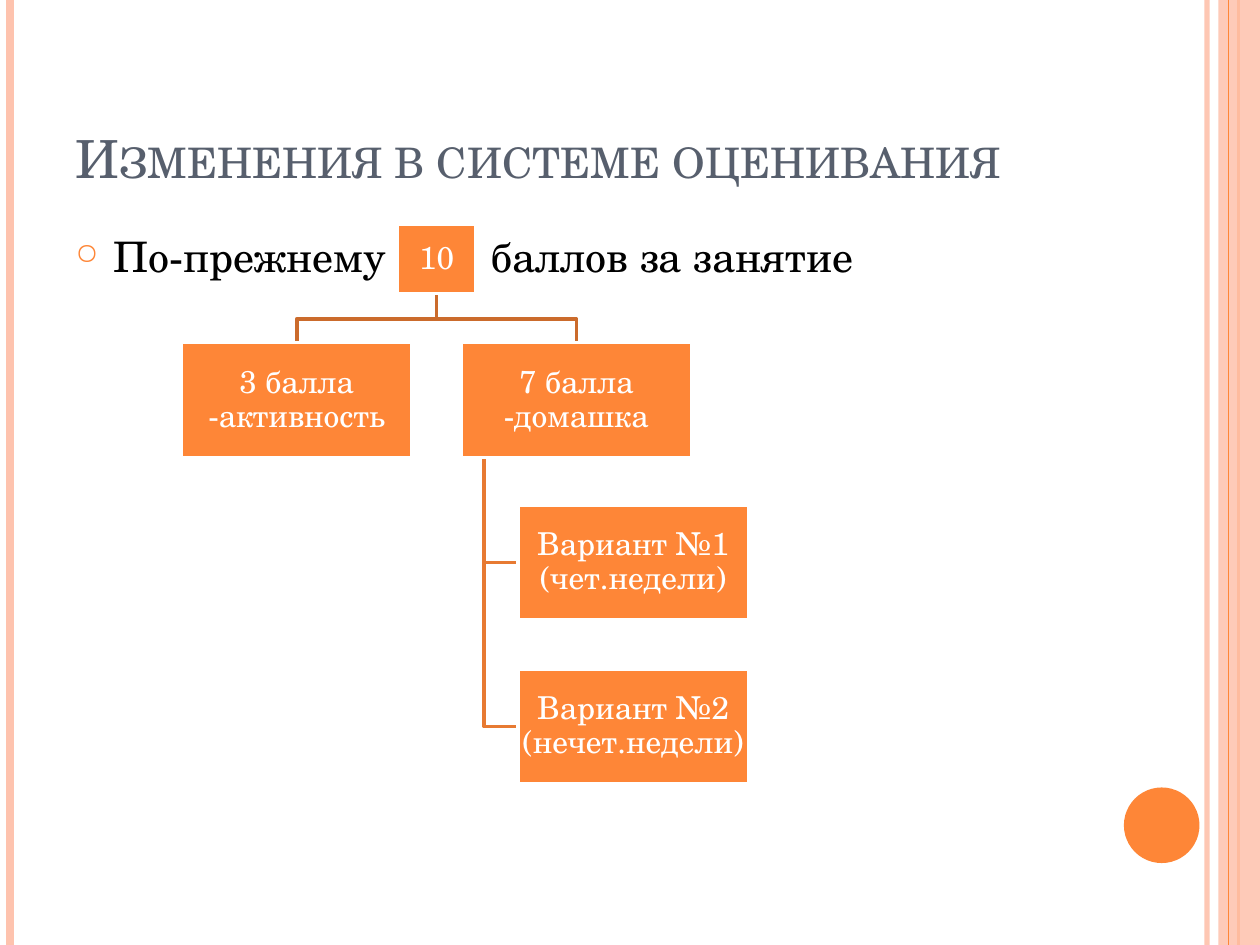
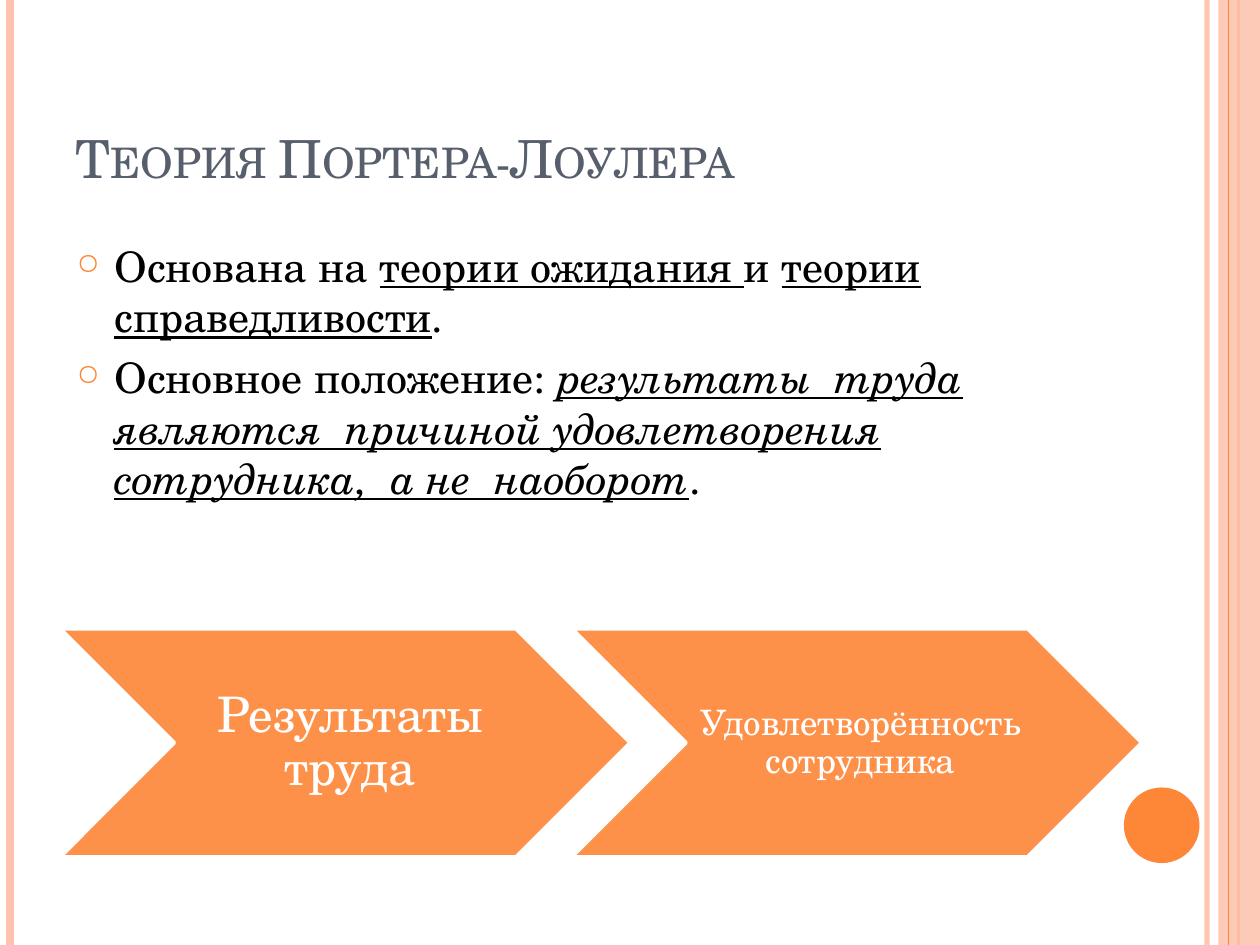
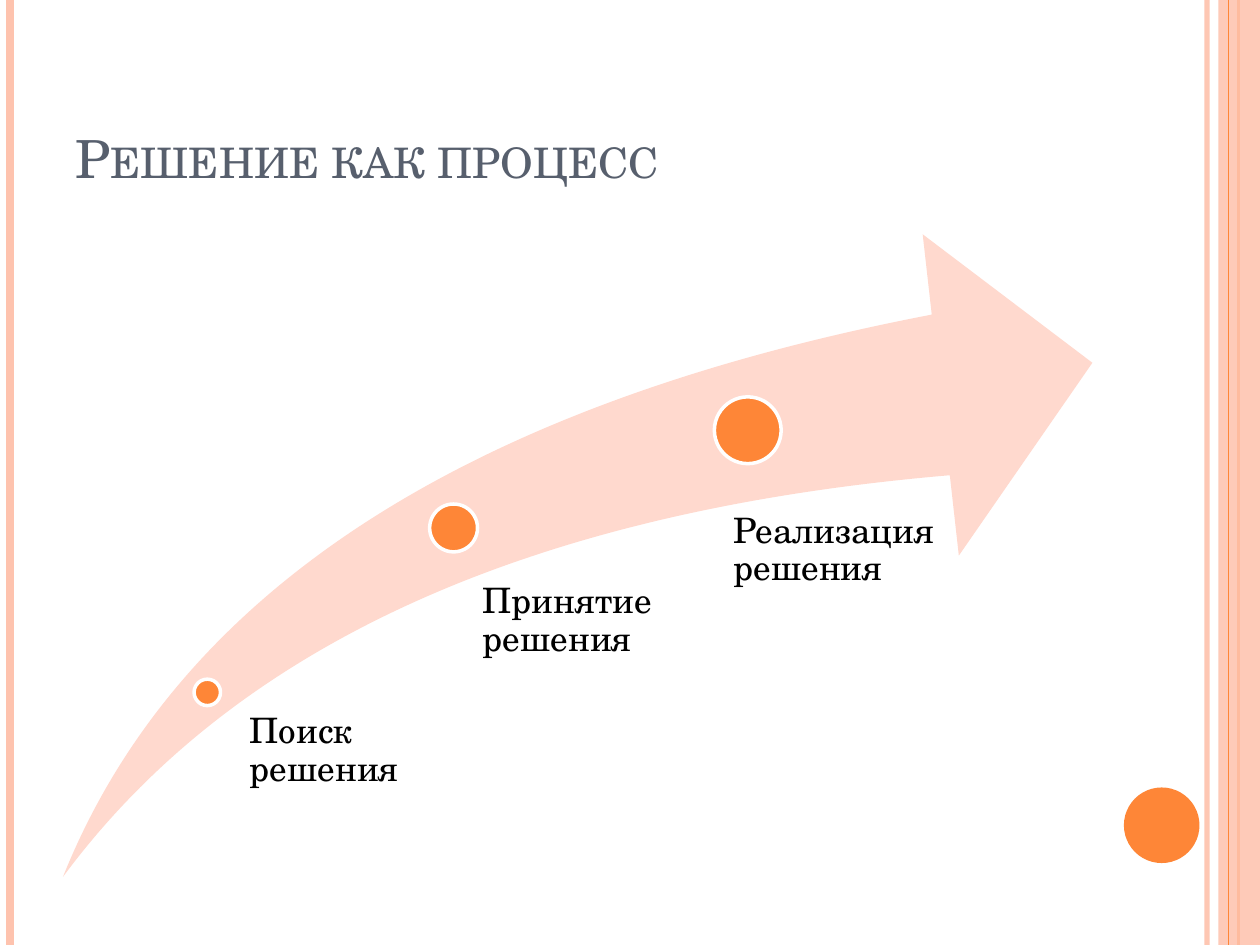
from lxml.etree import SubElement
from pptx import Presentation
from pptx.dml.color import RGBColor
from pptx.enum.shapes import MSO_CONNECTOR as Link, MSO_SHAPE as Kind
from pptx.enum.text import MSO_ANCHOR as Anchor, MSO_AUTO_SIZE as Fit, PP_ALIGN as Align
from pptx.oxml.ns import qn
from pptx.util import Inches, Pt

FONT = "TeX Gyre Schola"
ORANGE, PEACH, BLUSH = "FE8637", "FEC3AE", "FFD9CE"
SLATE, BLACK, WHITE = "575F6D", "000000", "FFFFFF"
FORK, BRANCH = "CB6B2C", "E77A32"
MARK = {"u": "sng"}
STRESS = {"u": "sng", "i": "1"}
GAP = {"spc": "5330"}


def rgb(code):
    """Turn a hex string into a colour."""
    return RGBColor.from_string(code)


def inches(*sizes):
    """Turn numbers into lengths."""
    return [Inches(size) for size in sizes]


def fade(item, alpha):
    """Make the colours set so far on an item partly transparent."""
    for clr in item.element.spPr.iter(qn("a:srgbClr")):
        SubElement(clr, qn("a:alpha"), val=str(alpha * 1000))


def draw(slide, kind, at, fill, edge=None, alpha=100):
    """Add a flat preset shape with an optional 2 pt edge."""
    shape = slide.shapes.add_shape(kind, *inches(*at))
    shape.shadow.inherit = False
    shape.fill.solid()
    shape.fill.fore_color.rgb = rgb(fill)
    if alpha < 100:
        fade(shape, alpha)
    if edge:
        shape.line.color.rgb = rgb(edge)
        shape.line.width = Pt(2)
    else:
        shape.line.fill.background()
    return shape


def rule(slide, x, color, width, alpha=100):
    """Add a vertical line over the full slide height."""
    line = slide.shapes.add_connector(Link.STRAIGHT, *inches(x, 0, x, 7.5))
    line.line.color.rgb = rgb(color)
    line.line.width = Pt(width)
    if alpha < 100:
        fade(line, alpha)
    SubElement(line.element.spPr, qn("a:effectLst"))


def style(para, size, color, align=Align.LEFT):
    """Set the font and alignment of a paragraph."""
    para.alignment = align
    para.font.name = FONT
    para.font.size = Pt(size)
    para.font.color.rgb = rgb(color)


def inset(frame, left, rest):
    """Set the inner margins of a text frame."""
    frame.margin_left = Inches(left)
    frame.margin_top = frame.margin_right = frame.margin_bottom = Inches(rest)


def label(shape, text, size, color=WHITE, align=Align.CENTER,
          anchor=Anchor.MIDDLE, left=0.01, rest=0.01):
    """Write one tightly set paragraph into a shape."""
    frame = shape.text_frame
    frame.word_wrap = True
    frame.vertical_anchor = anchor
    inset(frame, left, rest)
    para = frame.paragraphs[0]
    para.text = text
    para.line_spacing = 0.9
    style(para, size, color, align)


def bullets(slide, at, items):
    """Add a bulleted list whose items are lists of text and run marks."""
    frame = slide.shapes.add_textbox(*inches(*at)).text_frame
    frame.word_wrap = True
    for num, runs in enumerate(items):
        para = frame.add_paragraph() if num else frame.paragraphs[0]
        para.space_before = Pt(6)
        props = para._p.get_or_add_pPr()
        props.set("marL", str(Inches(0.3)))
        props.set("indent", str(-Inches(0.3)))
        SubElement(SubElement(props, qn("a:buClr")), qn("a:srgbClr"), val=ORANGE)
        SubElement(props, qn("a:buSzPct"), val="70000")
        SubElement(props, qn("a:buChar"), char="○")
        style(para, 24, BLACK)
        for text, marks in runs:
            run = para.add_run()
            run.text = text
            for name, value in marks.items():
                run._r.get_or_add_rPr().set(name, value)


def start(deck, text):
    """Add a slide with the shared bands, disc and title."""
    slide = deck.slides.add_slide(deck.slide_layouts[5])
    rule(slide, 9.58, PEACH, 3, 93)
    rule(slide, 0.08, PEACH, 4.5)
    rule(slide, 9.83, ORANGE, 1.5)
    draw(slide, Kind.RECTANGLE, (9.67, 0, 0.33, 7.5), PEACH, alpha=87)
    rule(slide, 9.75, ORANGE, 0.75)
    draw(slide, Kind.OVAL, (8.92, 6.25, 0.6, 0.6), ORANGE)
    title = slide.shapes.title
    title.left, title.top, title.width, title.height = inches(0.5, 0.3, 8.17, 1.25)
    frame = title.text_frame
    frame.auto_size = Fit.NONE
    frame.vertical_anchor = Anchor.BOTTOM
    para = frame.paragraphs[0]
    run = para.add_run()
    run.text = text
    run._r.get_or_add_rPr().set("cap", "small")
    style(para, 30, SLATE)
    return slide


def trace(slide, points, color):
    """Add an open bent line through the points."""
    first, *rest = [inches(*point) for point in points]
    pen = slide.shapes.build_freeform(*first)
    pen.add_line_segments(rest, close=False)
    path = pen.convert_to_shape()
    path.shadow.inherit = False
    path.fill.background()
    path.line.color.rgb = rgb(color)
    path.line.width = Pt(2)


def tree(slide, x, y):
    """Draw the tree of points with its top left corner at x, y."""
    wide, high = 1.83, 0.91
    root = (x + 1.71, y, 0.63, 0.55)
    row = y + 0.94
    cols = [x, x + 2.22]
    side = x + 2.67
    rows = [y + 2.23, y + 3.53]
    stem = x + 2.4
    for top in reversed(rows):
        mid = top + high / 2
        trace(slide, [(stem, row + high), (stem, mid), (side, mid)], BRANCH)
    hub = root[0] + root[2] / 2
    for left in reversed(cols):
        mid = left + wide / 2
        trace(slide, [(hub, y + 0.55), (hub, y + 0.75), (mid, y + 0.75), (mid, row)], FORK)
    spots = [root] + [(left, row, wide, high) for left in cols]
    spots += [(side, top, wide, high) for top in rows]
    texts = ["10", "3 балла\v-активность", "7 балла\v-домашка",
             "Вариант №1\v(чет.недели)", "Вариант №2\v(нечет.недели)"]
    for spot, text in zip(spots, texts):
        label(draw(slide, Kind.RECTANGLE, spot, ORANGE, WHITE), text, 18)


def chain(slide, x, y):
    """Draw the two chevrons from x, y to the right."""
    steps = [("Результаты труда", 28, 0.12, 0.04),
             ("Удовлетворённость сотрудника", 20, 0.09, 0.03)]
    for num, (text, size, left, rest) in enumerate(steps):
        at = (x + num * 4.06, y, 4.52, 1.81)
        shape = draw(slide, Kind.CHEVRON, at, ORANGE, WHITE, 90)
        label(shape, text, size, left=left, rest=rest)


def swoosh(slide, x, y, wide, high):
    """Draw the rising arrow with its three stages in the given box."""
    arrow = draw(slide, Kind.SWOOSH_ARROW, (x, y, wide, high), BLUSH)
    arrow.adjustments[0] = arrow.adjustments[1] = 0.25
    stages = [("Поиск решения", 1.04, 3.53, 0.21, (1.37, 3.8, 1.9, 1.13), 0.11),
              ("Принятие решения", 2.91, 2.14, 0.38, (3.13, 2.77, 1.96, 1.75), 0.2),
              ("Реализация решения", 5.17, 1.29, 0.53, (5.04, 2.21, 1.96, 1.45), 0.28)]
    for text, dx, dy, size, (left, top, *area), pad in stages:
        draw(slide, Kind.OVAL, (x + dx, y + dy, size, size), ORANGE, WHITE)
        box = slide.shapes.add_textbox(*inches(x + left, y + top, *area))
        label(box, text, 20, BLACK, Align.LEFT, Anchor.TOP, pad, 0)


def main():
    """Build and save the three slides."""
    deck = Presentation()
    deck.slide_width, deck.slide_height = inches(10, 7.5)

    slide = start(deck, "Изменения в системе оценивания")
    bullets(slide, (0.5, 1.78, 8.17, 5.33),
            [[("По-прежнему", {}), (" ", GAP), ("баллов за занятие", {})]])
    tree(slide, 1.44, 1.78)

    slide = start(deck, "Теория Портера-Лоулера")
    bullets(slide, (0.51, 1.86, 8.17, 3), [
        [("Основана на ", {}), ("теории ожидания ", MARK), ("и ", {}),
         ("теории справедливости", MARK), (".", {})],
        [("Основное положение: ", {}),
         ("результаты  труда являются  причиной удовлетворения "
          "сотрудника,  а не  наоборот", STRESS), (".", {})]])
    chain(slide, 0.48, 4.99)

    slide = start(deck, "Решение как процесс")
    swoosh(slide, 0.5, 1.86, 8.17, 5.1)

    deck.save("out.pptx")


if __name__ == "__main__":
    main()
